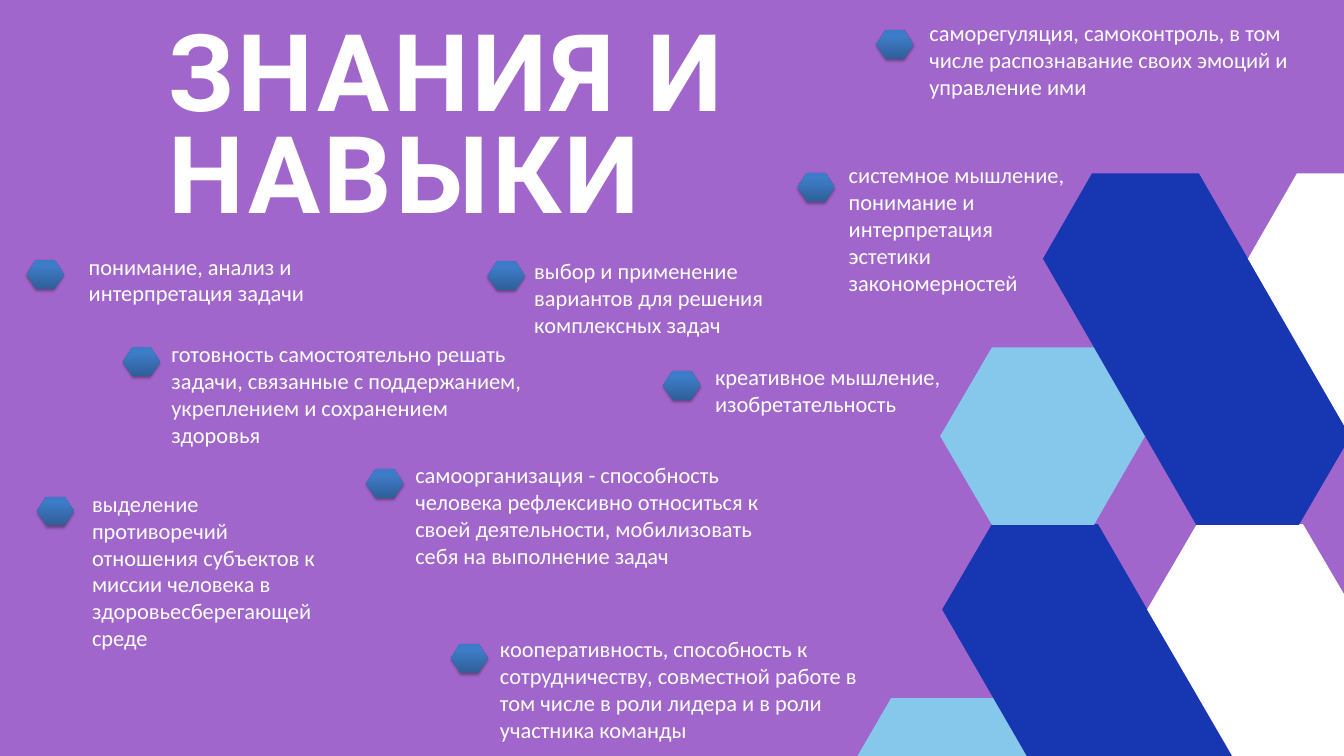
from lxml import etree
from pptx import Presentation
from pptx.dml.color import RGBColor
from pptx.enum import shapes, text
from pptx.oxml import ns
from pptx.util import Inches, Pt

PURPLE = RGBColor(0xA0, 0x66, 0xCB)
SKY = RGBColor(0x86, 0xC7, 0xEC)
BLUE = RGBColor(0x17, 0x36, 0xB1)
WHITE = RGBColor(0xFF, 0xFF, 0xFF)
MARKER_STOPS = [
    (0, RGBColor(0x2F, 0x5F, 0x99)),
    (80, RGBColor(0x3D, 0x7C, 0xC7)),
    (100, RGBColor(0x3A, 0x7C, 0xCB)),
]

# Outlines in inches, back to front
PATTERN = [
    (SKY, [(12.76, 11.25), (13.26, 10.39), (14.79, 10.39), (15.29, 11.25)]),
    (BLUE, [(14.02, 9.07), (14.76, 7.8), (16.34, 7.8), (18.33, 11.25), (15.28, 11.25)]),
    (WHITE, [(17.07, 9.07), (17.81, 7.8), (19.39, 7.8), (20, 8.84), (20, 11.25), (18.34, 11.25)]),
    (SKY, [(13.99, 6.49), (14.76, 5.17), (16.28, 5.17), (17.04, 6.49), (16.28, 7.81), (14.76, 7.81)]),
    (BLUE, [(15.52, 3.85), (16.25, 2.58), (17.84, 2.58), (20, 6.33), (20, 6.66), (19.33, 7.81),
            (17.8, 7.81)]),
    (WHITE, [(18.57, 3.85), (19.3, 2.58), (20, 2.58), (20, 6.33)]),
]

# Marker position, text box (left, top, width, height), wording
SKILLS = [
    ((0.4, 3.87), (1.32, 3.75, 3.42, 0.82), "понимание, анализ и интерпретация задачи"),
    ((0.55, 7.39), (1.37, 7.28, 3.43, 2.43),
     "выделение противоречий отношения субъектов к миссии человека в здоровьесберегающей среде"),
    ((7.26, 3.89), (7.95, 3.82, 3.42, 1.22),
     "выбор и применение вариантов для решения комплексных задач"),
    ((9.87, 5.52), (10.64, 5.4, 3.42, 0.82), "креативное мышление, изобретательность"),
    ((11.87, 2.57), (12.63, 2.39, 3.42, 2.03),
     "системное мышление, понимание и интерпретация эстетики закономерностей"),
    ((13.04, 0.45), (13.83, 0.28, 5.42, 1.22),
     "саморегуляция, самоконтроль, в том числе распознавание своих эмоций и управление ими"),
    ((6.71, 9.58), (7.44, 9.44, 5.42, 1.62),
     "кооперативность, способность к сотрудничеству, совместной работе в том числе в роли лидера "
     "и в роли участника команды"),
    ((5.45, 6.98), (6.18, 6.85, 5.42, 1.62),
     "самоорганизация - способность человека рефлексивно относиться к своей деятельности, "
     "мобилизовать себя на выполнение задач"),
    ((1.83, 5.17), (2.55, 5.05, 5.42, 1.62),
     "готовность самостоятельно решать задачи, связанные с поддержанием, укреплением и "
     "сохранением здоровья"),
]


def add_child(parent, tag, **attributes):
    child = etree.SubElement(parent, ns.qn(tag))
    for name, value in attributes.items():
        child.set(name, str(value))
    return child


def add_polygons(container, polygons):
    for color, outline in polygons:
        points = [(Inches(x), Inches(y)) for x, y in outline]
        builder = container.build_freeform(*points[0])
        builder.add_line_segments(points[1:], close=True)
        shape = builder.convert_to_shape()
        shape.shadow.inherit = False
        shape.fill.solid()
        shape.fill.fore_color.rgb = color
        shape.line.fill.background()


def add_text(slide, box, wording, font_name, size, space_before, margin_top):
    shape = slide.shapes.add_textbox(*map(Inches, box))
    frame = shape.text_frame
    frame.word_wrap = True
    frame.auto_size = text.MSO_AUTO_SIZE.SHAPE_TO_FIT_TEXT
    frame.margin_left = frame.margin_right = frame.margin_bottom = 0
    frame.margin_top = Inches(margin_top)
    paragraph = frame.paragraphs[0]
    paragraph.text = wording
    paragraph.space_before = Pt(space_before)
    paragraph.font.name = font_name
    paragraph.font.size = Pt(size)
    paragraph.font.color.rgb = WHITE
    return paragraph


def add_title(slide):
    paragraph = add_text(slide, (2.51, 0.29, 9.16, 3.26), "ЗНАНИЯ И НАВЫКИ",
                         "Roboto", 115, 12.5, 0.17)
    paragraph.line_spacing = Pt(109.5)
    paragraph.font.bold = True
    # Letter spacing in hundredths of a point
    paragraph.runs[0].font._element.set("spc", "350")


def add_marker(slide, left, top):
    shape = slide.shapes.add_shape(shapes.MSO_SHAPE.HEXAGON, Inches(left), Inches(top),
                                   Inches(0.55), Inches(0.43))
    shape.adjustments[0] = 0.33
    shape.line.fill.background()
    shape.shadow.inherit = False

    # Three-stop vertical gradient, dark at the bottom
    shape.fill.gradient()
    properties = shape._element.spPr
    gradient = properties.find(ns.qn("a:gradFill"))
    for child in list(gradient):
        gradient.remove(child)
    stops = add_child(gradient, "a:gsLst")
    for position, color in MARKER_STOPS:
        stop = add_child(stops, "a:gs", pos=position * 1000)
        add_child(stop, "a:srgbClr", val=color)
    add_child(gradient, "a:lin", ang=270 * 60000, scaled=0)

    # Soft shadow below
    effects = properties.find(ns.qn("a:effectLst"))
    shadow = add_child(effects, "a:outerShdw", blurRad=Pt(3.1), dist=Pt(1.8),
                       dir=90 * 60000, rotWithShape=0)
    shadow_color = add_child(shadow, "a:srgbClr", val="000000")
    add_child(shadow_color, "a:alpha", val=35000)


def main():
    presentation = Presentation()
    presentation.slide_width = Inches(20)
    presentation.slide_height = Inches(11.25)
    slide = presentation.slides.add_slide(presentation.slide_layouts[6])

    # Background and title
    slide.background.fill.solid()
    slide.background.fill.fore_color.rgb = PURPLE
    add_title(slide)

    # Hexagon pattern on the right
    add_polygons(slide.shapes.add_group_shape().shapes, PATTERN)

    # Skills with their markers
    for marker, box, wording in SKILLS:
        add_text(slide, box, wording, "Calibri", 24, 0.6, 0.01)
        add_marker(slide, *marker)

    presentation.save("out.pptx")


if __name__ == "__main__":
    main()
